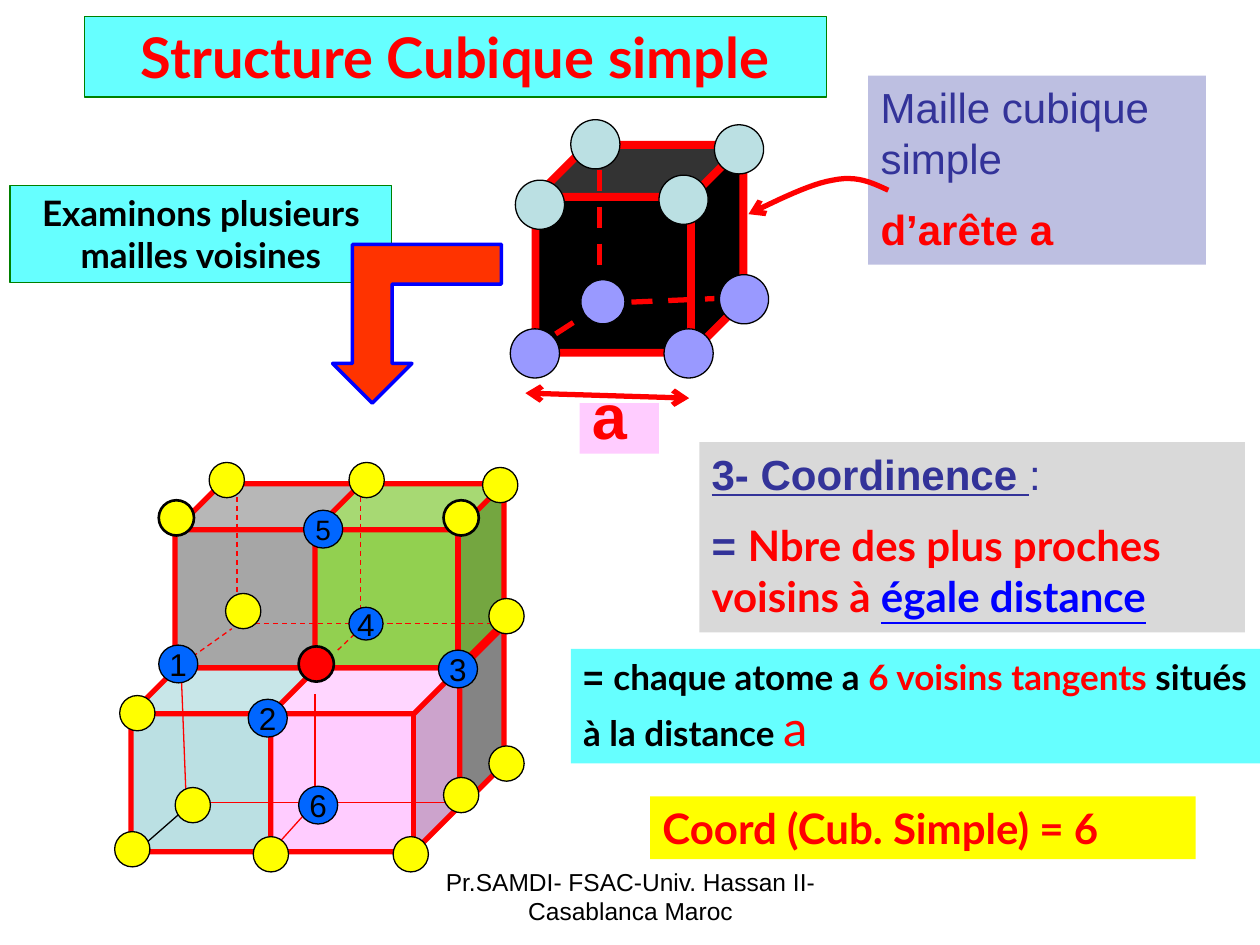
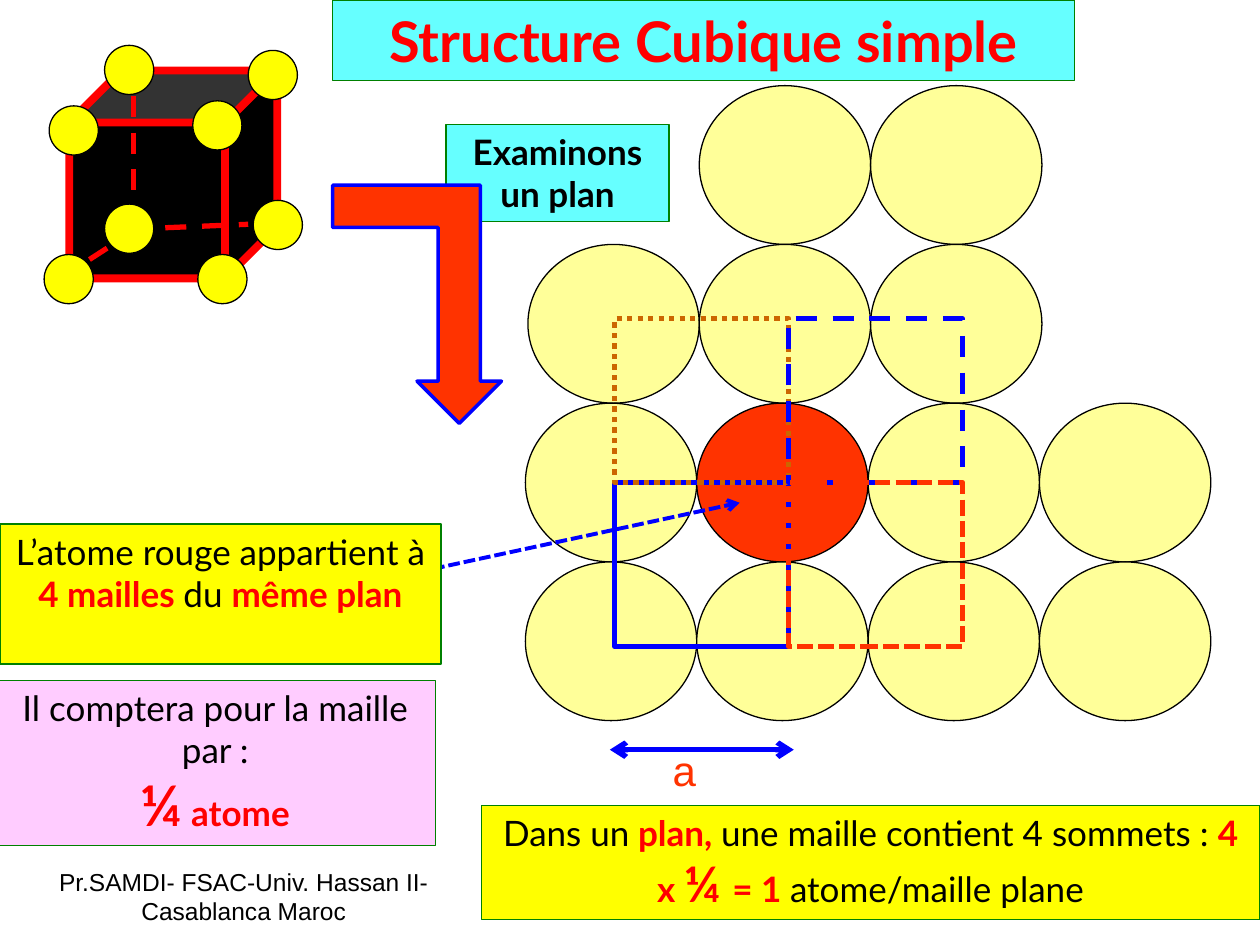
from pptx import Presentation
from pptx import util as u
from pptx.dml.color import RGBColor
from pptx.enum import dml, shapes, text
from pptx.oxml.ns import qn
from lxml import etree

RED = RGBColor(0xFF, 0x00, 0x00)
ORANGE = RGBColor(0xFF, 0x33, 0x00)
OCHRE = RGBColor(0xCC, 0x66, 0x00)
BLUE = RGBColor(0x00, 0x00, 0xFF)
ATOM_BLUE = RGBColor(0x00, 0x66, 0xFF)
NAVY = RGBColor(0x33, 0x33, 0x99)
LILAC = RGBColor(0x99, 0x99, 0xFF)
LAVENDER = RGBColor(0xBD, 0xBF, 0xE1)
CYAN = RGBColor(0x66, 0xFF, 0xFF)
ICE = RGBColor(0xBB, 0xE0, 0xE3)
PINK = RGBColor(0xFF, 0xCC, 0xFF)
YELLOW = RGBColor(0xFF, 0xFF, 0x00)
CREAM = RGBColor(0xFF, 0xFF, 0x99)
GREEN = RGBColor(0x92, 0xD0, 0x50)
DARK_GREEN = RGBColor(0x00, 0x80, 0x00)
GREY = RGBColor(0xA6, 0xA6, 0xA6)
PALE_GREY = RGBColor(0xD9, 0xD9, 0xD9)
BLACK = RGBColor(0x00, 0x00, 0x00)
WHITE = RGBColor(0xFF, 0xFF, 0xFF)

SHAPE = shapes.MSO_SHAPE
DASH = dml.MSO_LINE.DASH
DOTS = dml.MSO_LINE.ROUND_DOT
SHORT_DASH = dml.MSO_LINE.SQUARE_DOT
CENTER = text.PP_ALIGN.CENTER

TITLE = "Structure Cubique simple"
FOOTER = "Pr.SAMDI- FSAC-Univ. Hassan II- Casablanca Maroc"


def look(name="Lato", size=20, color=BLACK, bold=False):
    return dict(name=name, size=size, color=color, bold=bold)


HOT = dict(color=RED, bold=True)
BODY = look()
STRONG = look(bold=True)

COORDINENCE = [
    (look("Arial", 24, NAVY), [("3- Coordinence", dict(bold=True, underline=True)),
                               (" ", dict(underline=True)), (":", {})]),
    (look("Lato", 24, RED, True), [("= ", dict(name="Arial", color=NAVY)),
                                   ("Nbre des plus proches voisins à ", {}),
                                   ("égale distance", dict(color=BLUE, underline=True))]),
]
CELL_CAPTION = [
    (look("Arial", 24, NAVY), [("Maille cubique simple", {})]),
    (look("Arial", 24, RED, True), [("d’arête a", {})]),
]
NEIGHBOURS = [(STRONG, [("= ", dict(name="Arial")), ("chaque atome a ", {}),
                        ("6 voisins tangents ", dict(color=RED)),
                        ("situés à la distance ", {}),
                        ("a", dict(size=28, color=RED, bold=False))])]
RED_ATOM = [(BODY, [("L’atome rouge appartient à ", {}), ("4 mailles ", HOT),
                    ("du ", {}), ("même plan", HOT)])]
SHARE = [(BODY, [("Il comptera pour la maille par :", {})]),
         (look(color=RED, bold=True), [("¼", dict(size=32)), (" atome", {})])]
PLANE_COUNT = [(BODY, [("Dans un", {}), (" plan, ", HOT),
                       ("une maille contient 4 sommets : ", {}), ("4 x ", HOT),
                       ("¼ ", dict(size=28, **HOT)), ("= 1 ", HOT),
                       ("atome/maille plane", {})])]

CELL_TOP_ATOMS = [(-0.16, 0.28), (0.28, -0.2), (1.42, -0.16), (0.98, 0.24)]
CELL_BASE_ATOMS = [(-0.2, 1.46), (1.02, 1.46), (1.46, 1.03)]
CELL_HIDDEN_EDGES = [((0.51, 0.2), (0.51, 1.3)), ((0.16, 1.5), (0.47, 1.3)),
                     ((0.47, 1.26), (1.42, 1.22))]

LATTICE_CUBES = [(1.04, 5.3, ICE), (1.39, 3.84, GREY), (2.5, 4.97, GREY),
                 (2.15, 5.3, PINK), (2.5, 3.84, GREEN)]
LOWER_EDGES = [((2.5, 5.51), (2.5, 6.37)), ((2.15, 6.76), (2.5, 6.37)),
               ((2.55, 6.37), (3.66, 6.37)), ((1.44, 5.38), (1.48, 6.41)),
               ((1.48, 6.37), (2.46, 6.37))]
UPPER_EDGES = [((2.86, 3.87), (2.86, 4.99)), ((2.68, 5.16), (2.86, 4.99)),
               ((2.86, 4.95), (3.92, 4.95)), ((1.88, 3.87), (1.88, 4.99)),
               ((1.53, 5.21), (1.84, 4.99)), ((1.88, 4.95), (2.95, 4.95))]
NUMBERED_ATOMS = [("5", 2.41, 4.05, 0.31, 16), ("1", 1.26, 5.12, 0.31, 18),
                  ("3", 3.48, 5.16, 0.31, 18), ("2", 1.97, 5.55, 0.31, 18),
                  ("4", 2.77, 4.82, 0.27, 18), ("6", 2.37, 6.24, 0.31, 18)]
OUTER_ATOMS = [(0.95, 5.52), (0.91, 6.6), (2.01, 6.64), (3.12, 6.64), (3.52, 6.17),
               (1.39, 6.25), (1.79, 4.71), (3.88, 4.75), (3.88, 5.92), (3.83, 3.71),
               (1.66, 3.67), (2.77, 3.67)]
FRONT_ATOMS = [(3.52, 3.97), (1.26, 3.97)]
POINTER_CURVES = [[(7.05, 1.51), (6.92, 1.45), (6.8, 1.39), (6.61, 1.43)],
                  [(6.61, 1.43), (6.43, 1.46), (6.19, 1.58), (5.94, 1.7)]]

PLANE_ROWS = [(5.55, 0.68, 2), (4.19, 1.94, 3), (4.17, 3.2, 4), (4.17, 4.46, 4)]
ATOM_W, ATOM_H = 1.36, 1.26
RED_ATOM_PLACE = (2, 1)
MESH_X, MESH_Y, MESH_W, MESH_H = 4.88, 2.53, 1.38, 1.3
MESHES = [(0, 1, BLUE, None), (0, 0, OCHRE, DOTS),
          (1, 0, BLUE, DASH), (1, 1, ORANGE, SHORT_DASH)]


def inches(*lengths):
    return [u.Cm(length * 2.54) for length in lengths]


def stroke(part, color, width, dash=None, arrows=()):
    part.line.color.rgb = color
    part.line.width = u.Pt(width)
    if dash:
        part.line.dash_style = dash
    for end in arrows:
        outline = part._element.spPr.find(qn("a:ln"))
        etree.SubElement(outline, qn(f"a:{end}End"), type="arrow")


def solid(slide, kind, box, fill=None, line=None, width=0.75, dash=None):
    part = slide.shapes.add_shape(kind, *inches(*box))
    part.shadow.inherit = False
    if fill is None:
        part.fill.background()
    else:
        part.fill.solid()
        part.fill.fore_color.rgb = fill
    if line is None:
        part.line.fill.background()
    else:
        stroke(part, line, width, dash)
    return part


def segment(slide, start, end, color, width=0.75, dash=None, arrows=()):
    edge = slide.shapes.add_connector(shapes.MSO_CONNECTOR.STRAIGHT, *inches(*start, *end))
    stroke(edge, color, width, dash, arrows)
    etree.SubElement(edge._element.spPr, qn("a:effectLst"))


def style(font, name=None, size=None, color=None, bold=None, underline=None):
    if name:
        font.name = name
    if size:
        font.size = u.Pt(size)
    if color is not None:
        font.color.rgb = color
    if bold is not None:
        font.bold = bold
    if underline:
        font.underline = True


def write(part, paragraphs, align=text.PP_ALIGN.LEFT, anchor=text.MSO_ANCHOR.TOP,
          wrap=True, spaced=False, spacing=None):
    frame = part.text_frame
    frame.word_wrap = wrap
    frame.vertical_anchor = anchor
    for index, (base, runs) in enumerate(paragraphs):
        paragraph = frame.paragraphs[0] if index == 0 else frame.add_paragraph()
        paragraph.alignment = align
        style(paragraph.font, **base)
        if spaced and index:
            paragraph.space_before = u.Pt(base["size"] / 2)
        if spacing:
            paragraph.line_spacing = spacing
        for words, change in runs:
            run = paragraph.add_run()
            run.text = words
            style(run.font, **change)


def plain(words, base):
    return [(base, [(words, {})])]


def label(slide, box, fill, paragraphs, line=None, **layout):
    write(solid(slide, SHAPE.RECTANGLE, box, fill, line), paragraphs, **layout)


def framed(slide, box, fill, paragraphs):
    label(slide, box, fill, paragraphs, DARK_GREEN, align=CENTER)


def title(slide, x, y):
    framed(slide, (x, y, 5.89, 0.64), CYAN, plain(TITLE, look(size=32, color=RED, bold=True)))


def footer(slide, x):
    note = slide.shapes.add_textbox(*inches(x, 6.83, 3.17, 0.52))
    write(note, plain(FOOTER, look("Arial", 14)), align=CENTER)


def atom(slide, x, y, size, fill, width=0.75, height=None):
    return solid(slide, SHAPE.OVAL, (x, y, size, height or size), fill, BLACK, width)


def cube(slide, box, fill, width):
    block = solid(slide, SHAPE.CUBE, box, fill, RED, width)
    block.adjustments[0] = 0.25


def unit_cell(slide, x, y, top_color, base_color):
    cube(slide, (x, y, 1.65, 1.65), BLACK, 4.5)
    for places, color in ((CELL_TOP_ATOMS, top_color), (CELL_BASE_ATOMS, base_color)):
        for dx, dy in places:
            atom(slide, x + dx, y + dy, 0.39, color)
    for (x1, y1), (x2, y2) in CELL_HIDDEN_EDGES:
        segment(slide, (x + x1, y + y1), (x + x2, y + y2), RED, 3, DASH)


def bent_arrow(slide, box, *flips):
    arrow = solid(slide, SHAPE.BENT_UP_ARROW, box, ORANGE, BLUE, 2)
    for flip in flips:
        arrow._element.spPr.find(qn("a:xfrm")).set(flip, "1")


def bezier(points, t):
    weights = ((1 - t) ** 3, 3 * t * (1 - t) ** 2, 3 * t * t * (1 - t), t ** 3)
    return inches(*(sum(w * p[axis] for w, p in zip(weights, points)) for axis in (0, 1)))


def pointer(slide):
    steps = 12
    places = [bezier(curve, step / steps) for curve in POINTER_CURVES
              for step in range(steps + 1)]
    builder = slide.shapes.build_freeform(*places[0])
    builder.add_line_segments(places[1:], close=False)
    curve = builder.convert_to_shape()
    curve.shadow.inherit = False
    curve.fill.background()
    stroke(curve, RED, 3, arrows=["tail"])


def lattice(slide):
    for x, y, color in LATTICE_CUBES:
        cube(slide, (x, y, 1.5, 1.46), color, 3)
    for start, end in LOWER_EDGES:
        segment(slide, start, end, RED)
    segment(slide, (1.08, 6.76), (1.48, 6.41), BLACK)
    for start, end in UPPER_EDGES:
        segment(slide, start, end, RED, dash=DASH)
    atom(slide, 2.37, 5.13, 0.28, RED, 1.5)
    for number, x, y, size, points in NUMBERED_ATOMS:
        ball = atom(slide, x, y, size, ATOM_BLUE, height=size - 0.01)
        write(ball, plain(number, look("Arial", points)), CENTER,
              text.MSO_ANCHOR.MIDDLE, wrap=False)
    for places, width in ((OUTER_ATOMS, 0.75), (FRONT_ATOMS, 1.5)):
        for x, y in places:
            atom(slide, x, y, 0.28, YELLOW, width)


def coordination_slide(slide):
    label(slide, (5.55, 3.51, 4.33, 1.51), PALE_GREY, COORDINENCE, spaced=True)
    lattice(slide)
    unit_cell(slide, 4.25, 1.15, ICE, LILAC)
    label(slide, (6.89, 0.6, 2.68, 1.5), LAVENDER, CELL_CAPTION, spaced=True)
    pointer(slide)
    atom(slide, 4.61, 2.22, 0.35, LILAC)
    label(slide, (4.6, 3.2, 0.63, 0.4), PINK,
          plain("a", look("Arial", 36, RED, True)), spacing=0.5)
    segment(slide, (4.17, 3.12), (5.47, 3.16), RED, 3, arrows=["head", "tail"])
    title(slide, 0.67, 0.13)
    framed(slide, (0.08, 1.47, 3.03, 0.77), CYAN,
           plain("Examinons plusieurs mailles voisines", STRONG))
    bent_arrow(slide, (2.64, 1.94, 1.34, 1.26), "flipH", "flipV")
    label(slide, (4.53, 5.15, 5.59, 0.91), CYAN, NEIGHBOURS)
    label(slide, (5.16, 6.32, 4.33, 0.5), YELLOW,
          plain("Coord (Cub. Simple) = 6", look(size=24, color=RED, bold=True)))
    footer(slide, 3.42)


def plane_slide(slide):
    unit_cell(slide, 0.55, 0.56, YELLOW, YELLOW)
    atom(slide, 0.83, 1.62, 0.39, YELLOW)
    title(slide, 2.64, 0)
    framed(slide, (3.54, 0.99, 1.77, 0.77), CYAN, plain("Examinons un plan", STRONG))
    bent_arrow(slide, (2.64, 1.47, 1.34, 1.89), "flipV")
    label(slide, (5.24, 6.03, 0.39, 0.3), WHITE,
          plain("a", look("Arial", 24, ORANGE)), spacing=0.5)
    segment(slide, (4.84, 5.95), (6.3, 5.95), BLUE, 3, arrows=["head", "tail"])
    for row, (x, y, count) in enumerate(PLANE_ROWS):
        for column in range(count):
            color = ORANGE if (row, column) == RED_ATOM_PLACE else CREAM
            atom(slide, x + column * ATOM_W, y, ATOM_W, color, height=ATOM_H)
    for column, row, color, dash in MESHES:
        box = (MESH_X + column * MESH_W, MESH_Y + row * MESH_H, MESH_W, MESH_H)
        solid(slide, SHAPE.RECTANGLE, box, None, color, 3, dash)
    segment(slide, (2.95, 4.62), (5.87, 3.99), BLUE, 2.25, SHORT_DASH, ["tail"])
    framed(slide, (0, 4.16, 3.5, 1.11), YELLOW, RED_ATOM)
    framed(slide, (-0.04, 5.4, 3.5, 1.31), PINK, SHARE)
    framed(slide, (3.82, 6.39, 6.18, 0.91), YELLOW, PLANE_COUNT)
    footer(slide, 0.35)


def main():
    deck = Presentation()
    deck.slide_width, deck.slide_height = inches(10, 7.5)
    for build in (coordination_slide, plane_slide):
        build(deck.slides.add_slide(deck.slide_layouts[6]))
    deck.save("out.pptx")


if __name__ == "__main__":
    main()
